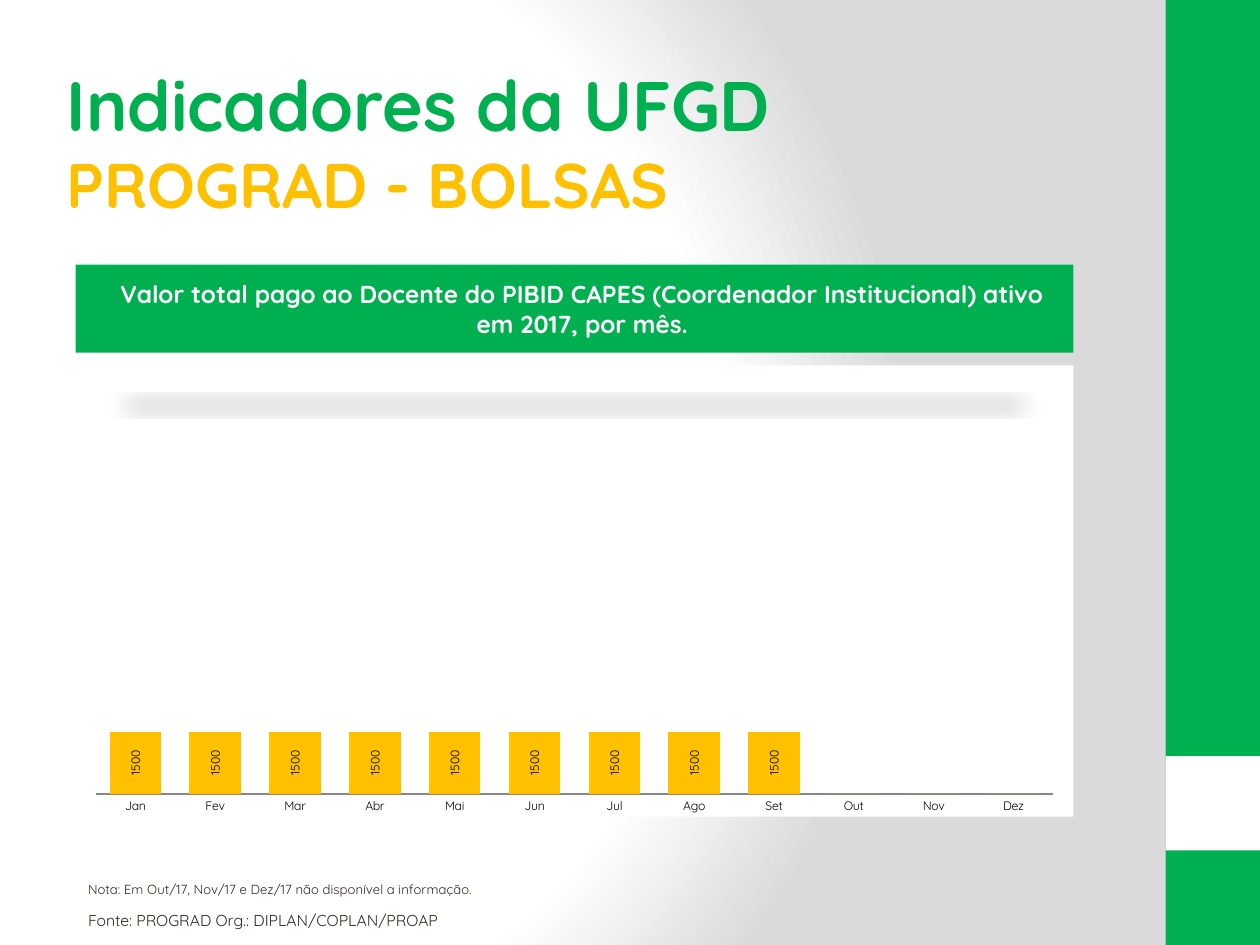
from dataclasses import dataclass

from lxml import etree
from pptx import Presentation
from pptx import util as u
from pptx.chart.data import CategoryChartData
from pptx.dml.color import RGBColor
from pptx.enum import chart as charts, shapes, text
from pptx.oxml import parse_xml
from pptx.oxml.ns import nsdecls, qn

Pt = u.Pt


@dataclass(frozen=True)
class Theme:
    font: str = "Quicksand"
    green: str = "00B050"
    yellow: str = "FFC000"
    white: str = "FFFFFF"
    gray: str = "DADADA"
    ink: str = "2F2B20"
    black: str = "000000"
    axis: str = "878787"
    title: float = 40
    subtitle: float = 36
    banner: float = 14
    source: float = 9
    note: float = 7.5
    chart: float = 7


THEME = Theme()
MONTHS = "Jan Fev Mar Abr Mai Jun Jul Ago Set Out Nov Dez".split()
VALUES = [1500] * 9 + [0] * 3


def style(font, size, color, bold=False):
    font.name, font.size, font.bold = THEME.font, Pt(size), bold
    font.color.rgb = RGBColor.from_string(color)


def place(shape, box):
    shape.left, shape.top, shape.width, shape.height = map(Pt, box)


def add_block(slide, box, color):
    block = slide.shapes.add_shape(shapes.MSO_SHAPE.RECTANGLE, *map(Pt, box))
    block.shadow.inherit = False
    block.fill.solid()
    block.fill.fore_color.rgb = RGBColor.from_string(color)
    block.line.fill.background()
    return block


def set_background(slide):
    """White glow at the left that fades to gray."""
    stops = "".join(
        f'<a:gs pos="{position * 1000}"><a:srgbClr val="{color}"/></a:gs>'
        for position, color in ((0, THEME.white), (75, THEME.white), (100, THEME.gray)))
    slide.background.fill.solid()
    solid = slide.background._cSld.find(".//" + qn("a:solidFill"))
    solid.getparent().replace(solid, parse_xml(
        f'<a:gradFill {nsdecls("a")} rotWithShape="1"><a:gsLst>{stops}</a:gsLst>'
        '<a:path path="circle"><a:fillToRect l="20000" t="50000" r="100000" b="50000"/>'
        '</a:path></a:gradFill>'))


def add_sidebar(slide, box):
    """Green strip with a white square near its foot."""
    left, top, width, height = box
    add_block(slide, box, THEME.green)
    add_block(slide, (left, top + 0.8 * height, width, width), THEME.white)


def add_title(slide, box):
    title = slide.shapes.title
    place(title, box)
    frame = title.text_frame
    frame.text = "Indicadores da UFGD\nPROGRAD - BOLSAS"
    frame.word_wrap = True
    frame.vertical_anchor = text.MSO_ANCHOR.TOP
    frame.auto_size = text.MSO_AUTO_SIZE.SHAPE_TO_FIT_TEXT
    looks = ((THEME.title, THEME.green), (THEME.subtitle, THEME.yellow))
    for paragraph, (size, color) in zip(frame.paragraphs, looks):
        paragraph.alignment = text.PP_ALIGN.LEFT
        style(paragraph.font, size, color, bold=True)


def add_banner(slide, box):
    banner = add_block(slide, box, THEME.green)
    # Flattened shadow cast below the banner
    effects = banner._element.spPr.find(qn("a:effectLst"))
    shadow = etree.SubElement(
        effects, qn("a:outerShdw"), blurRad=str(Pt(12)), dist=str(Pt(25)),
        dir="5400000", sx="90000", sy="-19000", rotWithShape="0")
    color = etree.SubElement(shadow, qn("a:srgbClr"), val=THEME.black)
    etree.SubElement(color, qn("a:alpha"), val="15000")

    frame = banner.text_frame
    frame.word_wrap = True
    frame.margin_left = Pt(16)
    frame.vertical_anchor = text.MSO_ANCHOR.MIDDLE
    paragraph = frame.paragraphs[0]
    paragraph.text = ("Valor total pago ao Docente do PIBID CAPES "
                      "(Coordenador Institucional) ativo em 2017, por mês.")
    paragraph.alignment = text.PP_ALIGN.CENTER
    paragraph.space_before = Pt(2.8)
    style(paragraph.font, THEME.banner, THEME.white, bold=True)


def set_chart_frame(chart, layout):
    """Fix the inner plot area and fill the chart with white."""
    area = chart._chartSpace.chart.plotArea
    for old in area.findall(qn("c:layout")):
        area.remove(old)
    sizes = "".join(f'<c:{key} val="{value}"/>' for key, value in zip("xywh", layout))
    area.insert(0, parse_xml(
        f'<c:layout {nsdecls("c")}><c:manualLayout><c:layoutTarget val="inner"/>'
        f'<c:xMode val="edge"/><c:yMode val="edge"/>{sizes}</c:manualLayout></c:layout>'))
    chart._chartSpace.find(qn("c:txPr")).addprevious(parse_xml(
        f'<c:spPr {nsdecls("c", "a")}><a:solidFill><a:srgbClr val="{THEME.white}"/>'
        '</a:solidFill><a:ln><a:noFill/></a:ln></c:spPr>'))


def add_grant_chart(slide, box):
    data = CategoryChartData()
    data.categories = MONTHS
    data.add_series("Series 1", VALUES)
    chart = slide.shapes.add_chart(
        charts.XL_CHART_TYPE.COLUMN_STACKED, *map(Pt, box), data).chart
    chart.has_legend = chart.has_title = False
    style(chart.font, THEME.chart, THEME.black)
    set_chart_frame(chart, (0.02, 0.04, 0.96, 0.91))

    # Axes
    values = chart.value_axis
    values.visible = values.has_major_gridlines = False
    values.minimum_scale, values.maximum_scale = 0, 10000
    months = chart.category_axis
    months.major_tick_mark = charts.XL_TICK_MARK.NONE
    months.format.line.color.rgb = RGBColor.from_string(THEME.axis)
    months.format.line.width = Pt(0.75)

    # Columns with upright labels; zeros stay unlabelled
    plot = chart.plots[0]
    plot.gap_width, plot.overlap, plot.vary_by_categories = 55, 100, False
    series = plot.series[0]
    series.format.fill.solid()
    series.format.fill.fore_color.rgb = RGBColor.from_string(THEME.yellow)
    labels = series.data_labels
    labels.show_value = True
    labels.number_format, labels.number_format_is_linked = "0;-0;;", False
    labels.position = charts.XL_LABEL_POSITION.CENTER
    style(labels.font, THEME.chart, THEME.black)
    body = labels._element.find(".//" + qn("a:bodyPr"))
    body.set("rot", "-5400000")
    body.set("vert", "horz")


def add_footnote(slide, box, words, size):
    note = slide.shapes.add_textbox(*map(Pt, box))
    frame = note.text_frame
    frame.word_wrap = True
    frame.auto_size = text.MSO_AUTO_SIZE.SHAPE_TO_FIT_TEXT
    paragraph = frame.paragraphs[0]
    paragraph.text = words
    style(paragraph.font, size, THEME.ink)


def main():
    presentation = Presentation()
    presentation.slide_width, presentation.slide_height = Pt(720), Pt(540)
    slide = presentation.slides.add_slide(presentation.slide_layouts[5])
    left, width = 43.2, 570.24

    set_background(slide)
    add_sidebar(slide, (666, 0, 54, 540))
    add_title(slide, (31, 31.7, 427, 99.4))
    add_grant_chart(slide, (left, 208.8, width, 257.8))
    add_banner(slide, (left, 151.2, width, 50.4))
    add_footnote(slide, (left, 517, 337, 18),
                 "Fonte: PROGRAD Org.: DIPLAN/COPLAN/PROAP", THEME.source)
    add_footnote(slide, (left, 500.4, 611.3, 16.6),
                 "Nota: Em Out/17, Nov/17 e Dez/17 não disponível a informação.", THEME.note)
    presentation.save("out.pptx")


if __name__ == "__main__":
    main()
